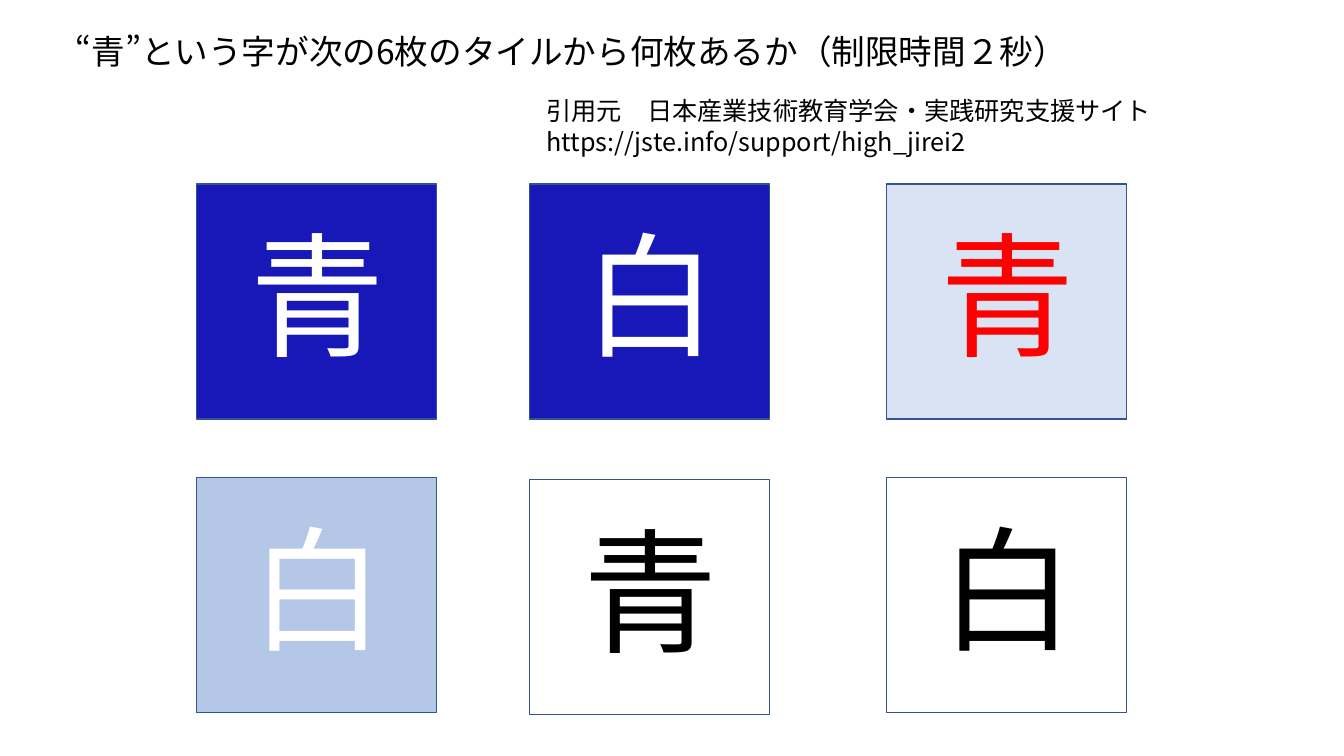
from lxml.etree import SubElement
from pptx import Presentation
from pptx.dml.color import RGBColor
from pptx.enum.lang import MSO_LANGUAGE_ID as LANGUAGE
from pptx.enum.shapes import MSO_SHAPE
from pptx.enum.text import MSO_ANCHOR, MSO_AUTO_SIZE, PP_ALIGN
from pptx.oxml.ns import qn
from pptx.util import Cm, Pt

FONT = "Noto Sans CJK JP"
LINE_HEIGHT = 1.2
COLOURS = {
    "black": "000000",
    "white": "FFFFFF",
    "red": "FF0000",
    "deep blue": "1818B8",
    "light blue": "B4C7E7",
    "pale blue": "DAE3F3",
    "outline": "325491",
}

TITLE_PARTS = ["“", "青", "”", "という字が次の6枚のタイルから何枚あるか（制限時間２秒）"]
SOURCE_LINES = [
    ["引用元　日本産業技術教育学会・実践研究支援サイト"],
    ["https://jste.info/support/high_jirei2"],
]

TILE_WIDTH, TILE_HEIGHT = 6.05, 5.92
COLUMNS = [4.95, 13.34, 22.34]
ROWS = [4.64, 12.04]
# column, row, vertical offset, character, text colour, tile colour
TILES = [
    (0, 0, 0, "青", "white", "deep blue"),
    (1, 0, 0, "白", "white", "deep blue"),
    (2, 0, 0, "青", "red", "pale blue"),
    (1, 1, 0.05, "青", "black", "white"),
    (0, 1, 0, "白", "white", "light blue"),
    (2, 1, 0, "白", "black", "white"),
]


def colour(name):
    return RGBColor.from_string(COLOURS[name])


def set_values(target, values):
    for name, value in values.items():
        setattr(target, name, value)


def place(shape, left, top, width, height):
    set_values(shape, {"left": Cm(left), "top": Cm(top),
                       "width": Cm(width), "height": Cm(height)})


def add_run(paragraph, text, size, text_colour):
    """Add a run; Korean language gives quotation marks their narrow form."""
    run = paragraph.add_run()
    run.text = text
    language = LANGUAGE.KOREAN if text in "“”" else LANGUAGE.JAPANESE
    set_values(run.font, {"name": FONT, "size": Pt(size), "language_id": language})
    run.font.color.rgb = colour(text_colour)
    east_asian = SubElement(run.font._element, qn("a:ea"))
    east_asian.set("typeface", FONT)


def write_lines(shape, lines, size, text_colour, wrap=True):
    """Write lines, each given as a list of run texts."""
    frame = shape.text_frame
    set_values(frame, {"word_wrap": wrap, "vertical_anchor": MSO_ANCHOR.TOP,
                       "auto_size": MSO_AUTO_SIZE.SHAPE_TO_FIT_TEXT})
    for index, parts in enumerate(lines):
        paragraph = frame.add_paragraph() if index else frame.paragraphs[0]
        set_values(paragraph, {"alignment": PP_ALIGN.LEFT, "space_before": Pt(0),
                               "line_spacing": Pt(size * LINE_HEIGHT)})
        for part in parts:
            add_run(paragraph, part, size, text_colour)


def add_text(shapes, box, lines, size, text_colour):
    write_lines(shapes.add_textbox(*map(Cm, box)), lines, size, text_colour)


def add_tile(slide, left, top, character, text_colour, tile_colour):
    """Group a coloured square with its large character."""
    group = slide.shapes.add_group_shape()
    square = group.shapes.add_shape(MSO_SHAPE.RECTANGLE, Cm(left), Cm(top),
                                    Cm(TILE_WIDTH), Cm(TILE_HEIGHT))
    square.shadow.inherit = False
    square.fill.solid()
    square.fill.fore_color.rgb = colour(tile_colour)
    square.line.color.rgb = colour("outline")
    square.line.width = Pt(1)
    add_text(group.shapes, (left + 1.11, top + 0.58, 3.76, 4.37),
             [[character]], 96, text_colour)


def main():
    presentation = Presentation()
    set_values(presentation, {"slide_width": Cm(33.87), "slide_height": Cm(19.05)})
    slide = presentation.slides.add_slide(presentation.slide_layouts[5])

    title = slide.shapes.title
    place(title, 1.65, 0.64, 27.03, 1.27)
    write_lines(title, [TITLE_PARTS], 24, "black")

    for column, row, offset, character, text_colour, tile_colour in TILES:
        add_tile(slide, COLUMNS[column], ROWS[row] + offset,
                 character, text_colour, tile_colour)

    add_text(slide.shapes, (13.52, 2.29, 16.94, 1.8), SOURCE_LINES, 18, "black")
    presentation.save("out.pptx")


if __name__ == "__main__":
    main()
